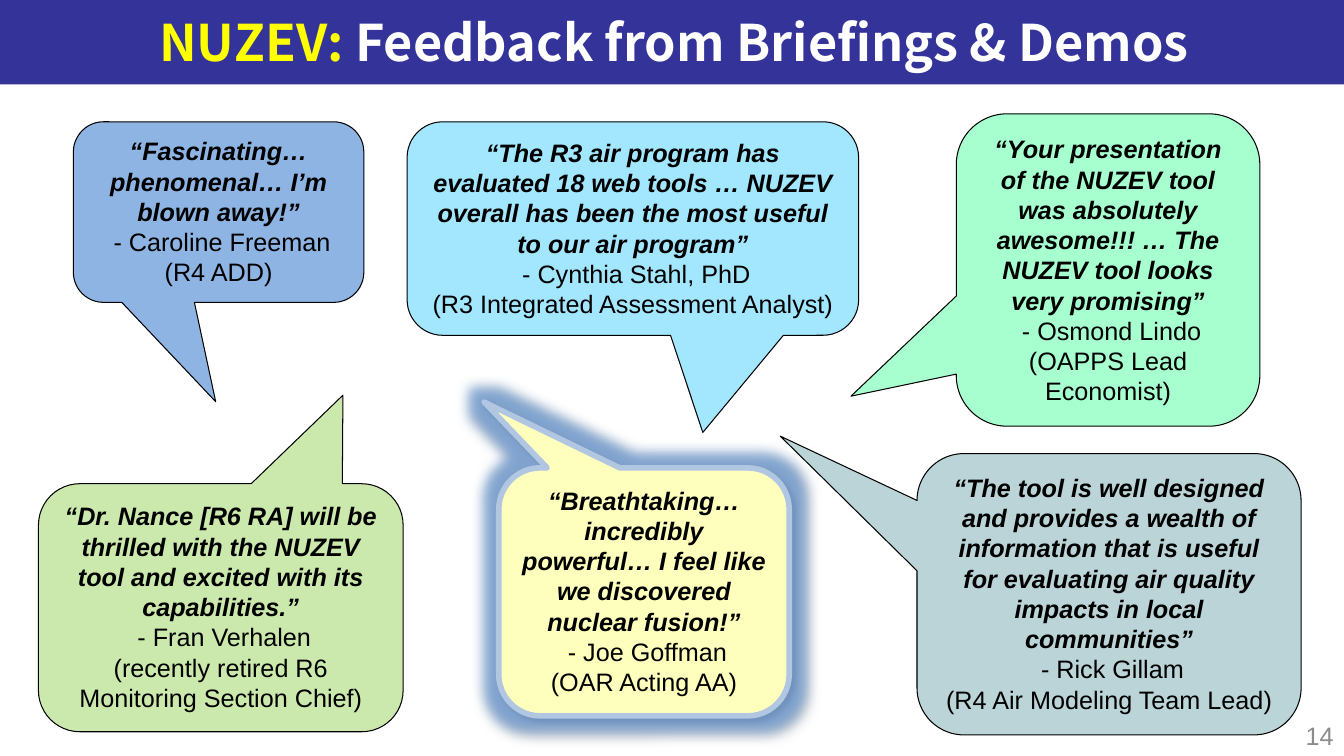
from lxml import etree
from pptx import Presentation
from pptx.dml.color import RGBColor
from pptx.enum.shapes import MSO_SHAPE
from pptx.enum.text import MSO_ANCHOR, MSO_AUTO_SIZE, PP_ALIGN
from pptx.util import Cm, Pt

RECT = MSO_SHAPE.RECTANGLE
BUBBLE = MSO_SHAPE.ROUNDED_RECTANGULAR_CALLOUT
TOP, MIDDLE = MSO_ANCHOR.TOP, MSO_ANCHOR.MIDDLE
CENTER, RIGHT = PP_ALIGN.CENTER, PP_ALIGN.RIGHT
GROW = MSO_AUTO_SIZE.SHAPE_TO_FIT_TEXT

NAVY = RGBColor(0x33, 0x33, 0x99)
YELLOW = RGBColor(0xFF, 0xFF, 0x00)
WHITE = RGBColor(0xFF, 0xFF, 0xFF)
BLACK = RGBColor(0x00, 0x00, 0x00)
GRAY = RGBColor(0x8C, 0x8C, 0x8C)
BLUE = RGBColor(0x8E, 0xB4, 0xE3)
CREAM = RGBColor(0xFF, 0xFF, 0xBD)
SKY = RGBColor(0xA3, 0xE7, 0xFF)
LIME = RGBColor(0xCC, 0xE9, 0xAD)
MINT = RGBColor(0xA7, 0xFF, 0xCF)
STEEL = RGBColor(0xBA, 0xD4, 0xD8)
EDGE = RGBColor(0xB0, 0xC6, 0xE1)

GLOW = """<a:effectLst xmlns:a="http://schemas.openxmlformats.org/drawingml/2006/main">
<a:glow rad="228600"><a:srgbClr val="558ED5"><a:alpha val="60000"/></a:srgbClr></a:glow>
<a:outerShdw blurRad="50800" dist="38100" dir="2700000" algn="tl" rotWithShape="0">
<a:srgbClr val="000000"><a:alpha val="40000"/></a:srgbClr></a:outerShdw>
</a:effectLst>"""

# Fill, box in cm, tail tip, quote, source lines
QUOTES = [
    (BLUE, (1.85, 3.07, 7.32, 4.55), (-0.01, 1.05),
     "“Fascinating… phenomenal… I’m blown away!”",
     [" - Caroline Freeman (R4 ADD)"]),
    (CREAM, (12.57, 11.79, 7.32, 6.25), (-0.55, -0.765),
     "“Breathtaking… incredibly powerful… I feel like we discovered nuclear fusion!”",
     [" - Joe Goffman", "(OAR Acting AA)"]),
    (SKY, (10.26, 3.07, 11.38, 5.38), (0.155, 0.955),
     "“The R3 air program has evaluated 18 web tools … NUZEV overall has been "
     "the most useful to our air program”",
     [" - Cynthia Stahl, PhD", "(R3 Integrated Assessment Analyst)"]),
    (LIME, (0.97, 12.19, 9.19, 6.25), (0.335, -0.857),
     "“Dr. Nance [R6 RA] will be thrilled with the NUZEV tool and excited "
     "with its capabilities.”",
     [" - Fran Verhalen", "(recently retired R6 Monitoring Section Chief)"]),
    (MINT, (24.1, 2.87, 7.65, 7.87), (-0.847, 0.404),
     "“Your presentation of the NUZEV tool was absolutely awesome!!! … "
     "The NUZEV tool looks very promising”",
     [" - Osmond Lindo (OAPPS Lead Economist)"]),
    (STEEL, (23.11, 11.43, 9.68, 7.09), (-0.856, -0.562),
     "“The tool is well designed and provides a wealth of information that is "
     "useful for evaluating air quality impacts in local communities”",
     [" - Rick Gillam", "(R4 Air Modeling Team Lead)"]),
]


def style(run, size, color, bold=False, italic=False, face="Arial"):
    font = run.font
    font.name, font.size, font.color.rgb = face, Pt(size), color
    font.bold, font.italic = bold, italic


deck = Presentation()
deck.slide_width, deck.slide_height = Cm(33.87), Cm(19.05)
slide = deck.slides.add_slide(deck.slide_layouts[6])
shapes = slide.shapes

# Title bar
bar = shapes.add_shape(RECT, 0, 0, deck.slide_width, Cm(2.13))
bar.shadow.inherit = False
bar.fill.solid()
bar.fill.fore_color.rgb = NAVY
bar.line.fill.background()

# Title
title = shapes.add_textbox(Cm(0.36), Cm(0.13), Cm(33.25), Cm(1.83))
frame = title.text_frame
frame.word_wrap = True
frame.vertical_anchor = MIDDLE
para = frame.paragraphs[0]
para.alignment = CENTER
for text, color in [("NUZEV: ", YELLOW), ("Feedback from Briefings & Demos", WHITE)]:
    run = para.add_run()
    run.text = text
    style(run, 36, color, bold=True, face="Noto Sans CJK SC")

# Quote bubbles
for fill, box, tip, quote, source in QUOTES:
    shape = shapes.add_shape(BUBBLE, *[Cm(side) for side in box])
    shape.adjustments[0], shape.adjustments[1] = tip
    shape.adjustments[2] = 0.167
    shape.fill.solid()
    shape.fill.fore_color.rgb = fill
    glows = fill == CREAM
    shape.line.color.rgb = EDGE if glows else BLACK
    shape.line.width = Pt(4 if glows else 0.75)
    if glows:
        shape._element.spPr.append(etree.fromstring(GLOW))
    else:
        shape.shadow.inherit = False
    frame = shape.text_frame
    frame.text = "\n".join([quote] + source)
    frame.word_wrap = True
    frame.auto_size = GROW
    frame.vertical_anchor = TOP
    for row, para in enumerate(frame.paragraphs):
        para.alignment = CENTER
        style(para.runs[0], 18, BLACK, bold=row == 0, italic=row == 0)

# Slide number
number = shapes.add_textbox(Cm(27.94), Cm(18.03), Cm(5.92), Cm(1.02))
number.text_frame.word_wrap = True
para = number.text_frame.paragraphs[0]
para.text = "14"
para.alignment = RIGHT
style(para.runs[0], 18, GRAY)

deck.save("out.pptx")
